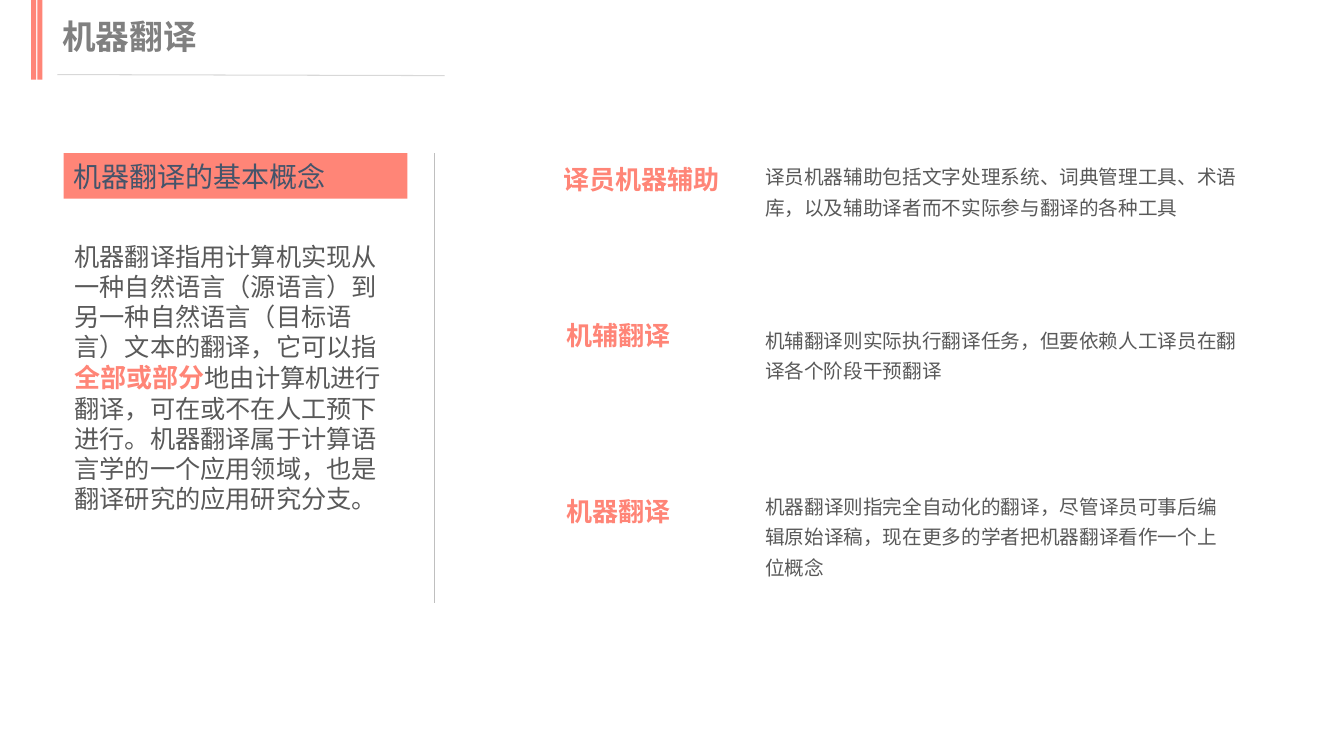
from pptx import Presentation
from pptx.dml.color import RGBColor
from pptx.enum.shapes import MSO_CONNECTOR, MSO_SHAPE
from pptx.enum.text import MSO_ANCHOR, MSO_AUTO_SIZE, PP_ALIGN
from pptx.oxml.ns import qn
from pptx.util import Inches, Pt

RECTANGLE = MSO_SHAPE.RECTANGLE
STRAIGHT = MSO_CONNECTOR.STRAIGHT
LEFT, CENTER = PP_ALIGN.LEFT, PP_ALIGN.CENTER
TOP, MIDDLE = MSO_ANCHOR.TOP, MSO_ANCHOR.MIDDLE
FIT_SHAPE = MSO_AUTO_SIZE.SHAPE_TO_FIT_TEXT
NO_FIT = MSO_AUTO_SIZE.NONE

FONT = "Noto Sans CJK SC"
CORAL, DARK_GREY = "FF8577", "595959"

TITLE_STYLE = {"size": Pt(24), "bold": True, "color": "808080"}
CONCEPT_STYLE = {"size": Pt(20), "bold": False, "color": "44546A"}
BODY_STYLE = {"size": Pt(18), "bold": False, "color": DARK_GREY}
TERM_STYLE = {"size": Pt(18.6), "bold": True, "color": CORAL}
DETAIL_STYLE = {"size": Pt(14), "bold": False, "color": DARK_GREY}
DETAIL_SPACING = {"line_spacing": 1.3, "space_before": Pt(8)}

DEFINITION = [
    ("机器翻译指用计算机实现从一种自然语言（源语言）到另一种自然语言（目标语言）文本的翻译，它可以指", BODY_STYLE),
    ("全部或部分", TERM_STYLE),
    ("地由计算机进行翻译，可在或不在人工预下进行。机器翻译属于计算语言学的一个应用领域，"
     "也是翻译研究的应用研究分支。", BODY_STYLE),
]

# term, term box, detail, detail box
TERMS = [
    ("译员机器辅助", (5.1, 1.57, 2.53, 0.42),
     "译员机器辅助包括文字处理系统、词典管理工具、术语库，以及辅助译者而不实际参与翻译的各种工具",
     (7.49, 1.52, 4.93, 0.69)),
    ("机辅翻译", (4.87, 3.12, 2.53, 0.42),
     "机辅翻译则实际执行翻译任务，但要依赖人工译员在翻译各个阶段干预翻译",
     (7.49, 3.14, 4.93, 0.69)),
    ("机器翻译", (4.87, 4.87, 2.53, 0.42),
     "机器翻译则指完全自动化的翻译，尽管译员可事后编辑原始译稿，现在更多的学者把机器翻译看作一个上位概念",
     (7.49, 4.79, 4.79, 0.99)),
]


def rgb(hex_color):
    return RGBColor.from_string(hex_color)


def set_attributes(target, values):
    for name, value in values.items():
        setattr(target, name, value)


def write_runs(frame, runs, paragraph_format, frame_format):
    """Fill a text frame with one paragraph of (text, style) runs."""
    set_attributes(frame, {"word_wrap": True, **frame_format})
    paragraph = frame.paragraphs[0]
    set_attributes(paragraph, {"alignment": LEFT, **paragraph_format})
    for text, style in runs:
        run = paragraph.add_run()
        run.text = text
        font_format = {key: value for key, value in style.items() if key != "color"}
        set_attributes(run.font, {"name": FONT, **font_format})
        run.font.color.rgb = rgb(style["color"])
        # Chinese glyphs take the East Asian typeface
        east_asian = run.font._element.makeelement(qn("a:ea"), {"typeface": FONT})
        run.font._element.append(east_asian)


def add_text(slide, box, runs, **paragraph_format):
    text_box = slide.shapes.add_textbox(*map(Inches, box))
    write_runs(text_box.text_frame, runs, paragraph_format,
               {"auto_size": FIT_SHAPE, "vertical_anchor": TOP})


def add_block(slide, box):
    block = slide.shapes.add_shape(RECTANGLE, *map(Inches, box))
    block.shadow.inherit = False
    block.fill.solid()
    block.fill.fore_color.rgb = rgb(CORAL)
    block.line.fill.background()
    return block


def add_rule(slide, ends, color):
    rule = slide.shapes.add_connector(STRAIGHT, *map(Inches, ends))
    rule.line.color.rgb = rgb(color)
    rule.line.width = Pt(0.75)
    properties = rule._element.spPr
    properties.append(properties.makeelement(qn("a:effectLst"), {}))


def main():
    prs = Presentation()
    prs.slide_width, prs.slide_height = Inches(13.33), Inches(7.5)
    slide = prs.slides.add_slide(prs.slide_layouts[6])

    # Terms and their details
    for term, term_box, detail, detail_box in TERMS:
        add_text(slide, term_box, [(term, TERM_STYLE)], alignment=CENTER)
        add_text(slide, detail_box, [(detail, DETAIL_STYLE)], **DETAIL_SPACING)

    # Basic concept and its definition
    concept = add_block(slide, (0.63, 1.52, 3.41, 0.45))
    write_runs(concept.text_frame, [("机器翻译的基本概念", CONCEPT_STYLE)], {},
               {"auto_size": NO_FIT, "vertical_anchor": MIDDLE})
    add_text(slide, (0.64, 2.34, 3.41, 3.17), DEFINITION)
    add_rule(slide, (4.31, 1.52, 4.31, 5.98), "BFBFBF")

    # Title with twin bars and underline
    for bar_left in (0.31, 0.37):
        add_block(slide, (bar_left, 0, 0.05, 0.79))
    add_text(slide, (0.52, 0.11, 4.23, 0.5), [("机器翻译", TITLE_STYLE)])
    add_rule(slide, (0.57, 0.74, 4.41, 0.75), "D8D8D8")

    prs.save("out.pptx")


if __name__ == "__main__":
    main()
